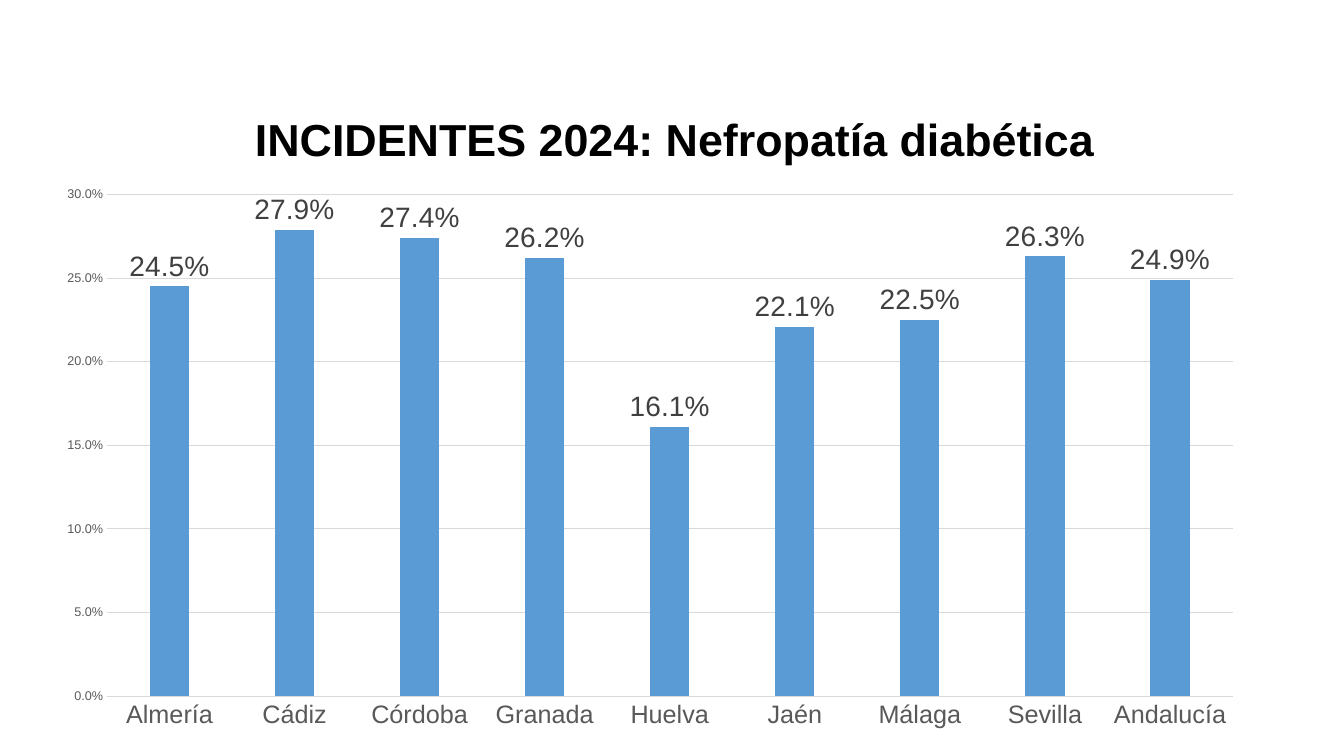
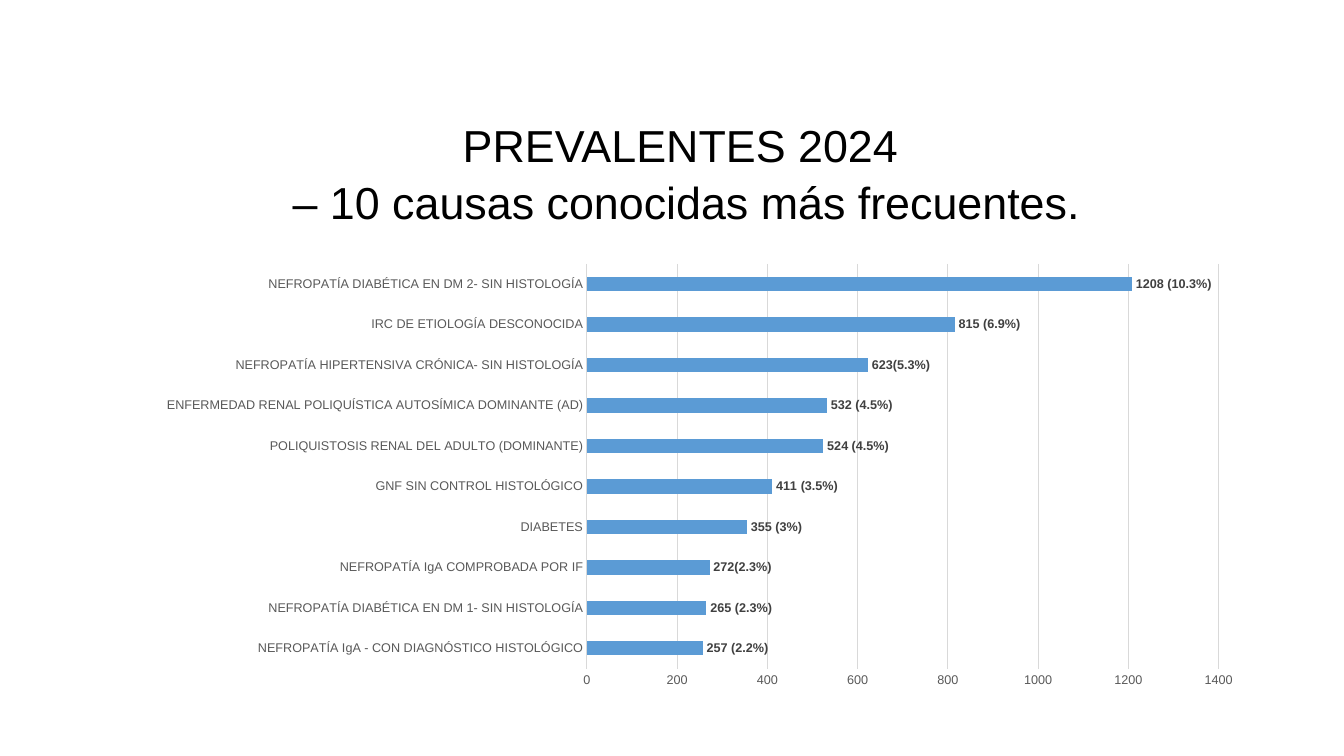
from lxml import etree
from pptx import Presentation
from pptx.chart.data import CategoryChartData
from pptx.dml.color import RGBColor
from pptx.enum.chart import XL_CHART_TYPE, XL_LABEL_POSITION, XL_TICK_MARK
from pptx.enum.text import MSO_ANCHOR, PP_ALIGN
from pptx.oxml.ns import qn
from pptx.util import Inches, Pt

BLACK = RGBColor(0x00, 0x00, 0x00)
AXIS_GREY = RGBColor(0x59, 0x59, 0x59)
LABEL_GREY = RGBColor(0x40, 0x40, 0x40)
GRID_GREY = RGBColor(0xD9, 0xD9, 0xD9)
BAR_BLUE = RGBColor(0x5B, 0x9B, 0xD5)
FONT = "Arial"


def set_font(font, size, color, bold=False):
    font.name = FONT
    font.size = Pt(size)
    font.bold = bold
    font.color.rgb = color


def add_bars(s, kind, box, plot_box, rows, gap, overlap, maximum, step, fmt, cat_size, label_size):
    data = CategoryChartData(number_format=fmt)
    data.categories = [row[0] for row in rows]
    data.add_series("Series 1", [row[1] for row in rows])
    chart = s.shapes.add_chart(kind, *[Inches(v) for v in box], data).chart
    chart.has_legend = False
    chart.has_title = False
    set_font(chart.font, 10, BLACK)

    cat, val = chart.category_axis, chart.value_axis
    for axis, size in ((cat, cat_size), (val, 9)):
        axis.major_tick_mark = axis.minor_tick_mark = XL_TICK_MARK.NONE
        set_font(axis.tick_labels.font, size, AXIS_GREY)
    val.minimum_scale, val.maximum_scale, val.major_unit = 0, maximum, step
    val.tick_labels.number_format = fmt
    val.tick_labels.number_format_is_linked = False
    val.has_major_gridlines = True
    val.format.line.fill.background()
    for line in (cat.format.line, val.major_gridlines.format.line):
        line.color.rgb = GRID_GREY
        line.width = Pt(0.75)

    plot = chart.plots[0]
    plot.vary_by_categories = False
    plot.gap_width = gap
    plot.overlap = overlap
    series = plot.series[0]
    series.format.fill.solid()
    series.format.fill.fore_color.rgb = BAR_BLUE
    labels = series.data_labels
    labels.show_value = True
    labels.number_format = fmt
    labels.number_format_is_linked = False
    labels.position = XL_LABEL_POSITION.OUTSIDE_END
    set_font(labels.font, label_size, LABEL_GREY)

    plot_area = chart._chartSpace.chart.plotArea
    for old in plot_area.findall(qn("c:layout")):
        plot_area.remove(old)
    layout = etree.Element(qn("c:layout"))
    plot_area.insert(0, layout)
    manual = etree.SubElement(layout, qn("c:manualLayout"))
    settings = [("layoutTarget", "inner"), ("xMode", "edge"), ("yMode", "edge")]
    for tag, value in settings + list(zip("xywh", plot_box)):
        etree.SubElement(manual, qn("c:" + tag)).set("val", str(value))
    return series


prs = Presentation()
prs.slide_width = Inches(13.33)
prs.slide_height = Inches(7.5)
blank = prs.slide_layouts[6]

provinces = [
    ("Almería", 0.245), ("Cádiz", 0.279), ("Córdoba", 0.274),
    ("Granada", 0.262), ("Huelva", 0.161), ("Jaén", 0.221),
    ("Málaga", 0.225), ("Sevilla", 0.263), ("Andalucía", 0.249),
]
s = prs.slides.add_slide(blank)
add_bars(s, XL_CHART_TYPE.COLUMN_CLUSTERED, (0.43, 1.75, 12.03, 5.6),
         (0.0525, 0.032, 0.928, 0.889), provinces, 219, -27, 0.3, 0.05, "0.0%", 18, 20)

causes = [
    ("NEFROPATÍA IgA - CON DIAGNÓSTICO HISTOLÓGICO", 257, "257 (2.2%)"),
    ("NEFROPATÍA DIABÉTICA EN DM 1- SIN HISTOLOGÍA", 265, "265 (2.3%)"),
    ("NEFROPATÍA IgA COMPROBADA POR IF", 272, "272(2.3%)"),
    ("DIABETES", 355, "355 (3%)"),
    ("GNF SIN CONTROL HISTOLÓGICO", 411, "411 (3.5%)"),
    ("POLIQUISTOSIS RENAL DEL ADULTO (DOMINANTE)", 524, "524 (4.5%)"),
    ("ENFERMEDAD RENAL POLIQUÍSTICA AUTOSÍMICA DOMINANTE (AD)", 532, "532 (4.5%)"),
    ("NEFROPATÍA HIPERTENSIVA CRÓNICA- SIN HISTOLOGÍA", 623, "623(5.3%)"),
    ("IRC DE ETIOLOGÍA DESCONOCIDA", 815, "815 (6.9%)"),
    ("NEFROPATÍA DIABÉTICA EN DM 2- SIN HISTOLOGÍA", 1208, "1208 (10.3%)"),
]
s = prs.slides.add_slide(blank)
series = add_bars(s, XL_CHART_TYPE.BAR_CLUSTERED, (0.1, 1.66, 13.03, 5.57),
                  (0.439, 0.172, 0.481, 0.721), causes, 182, 0, 1400, 200, "General", 9, 9)
for i, cause in enumerate(causes):
    label = series.points[i].data_label
    p = label.text_frame.paragraphs[0]
    r = p.add_run()
    r.text = cause[2]
    set_font(r.font, 9, LABEL_GREY, True)
    label.position = XL_LABEL_POSITION.OUTSIDE_END

titles = [
    ((2.43, 1.02, 8.72, 0.73), "INCIDENTES 2024: Nefropatía diabética", PP_ALIGN.LEFT, True),
    ((0.9, 1.08, 11.7, 0.33), "PREVALENTES 2024\n – 10 causas conocidas más frecuentes.",
     PP_ALIGN.CENTER, False),
]
for s, (box, text, align, bold) in zip(prs.slides, titles):
    tf = s.shapes.add_textbox(*[Inches(v) for v in box]).text_frame
    tf.word_wrap = True
    tf.vertical_anchor = MSO_ANCHOR.TOP
    tf.text = text
    for p in tf.paragraphs:
        p.alignment = align
        p.line_spacing = 1.07
        for r in p.runs:
            set_font(r.font, 32, BLACK, bold)

prs.save("out.pptx")
